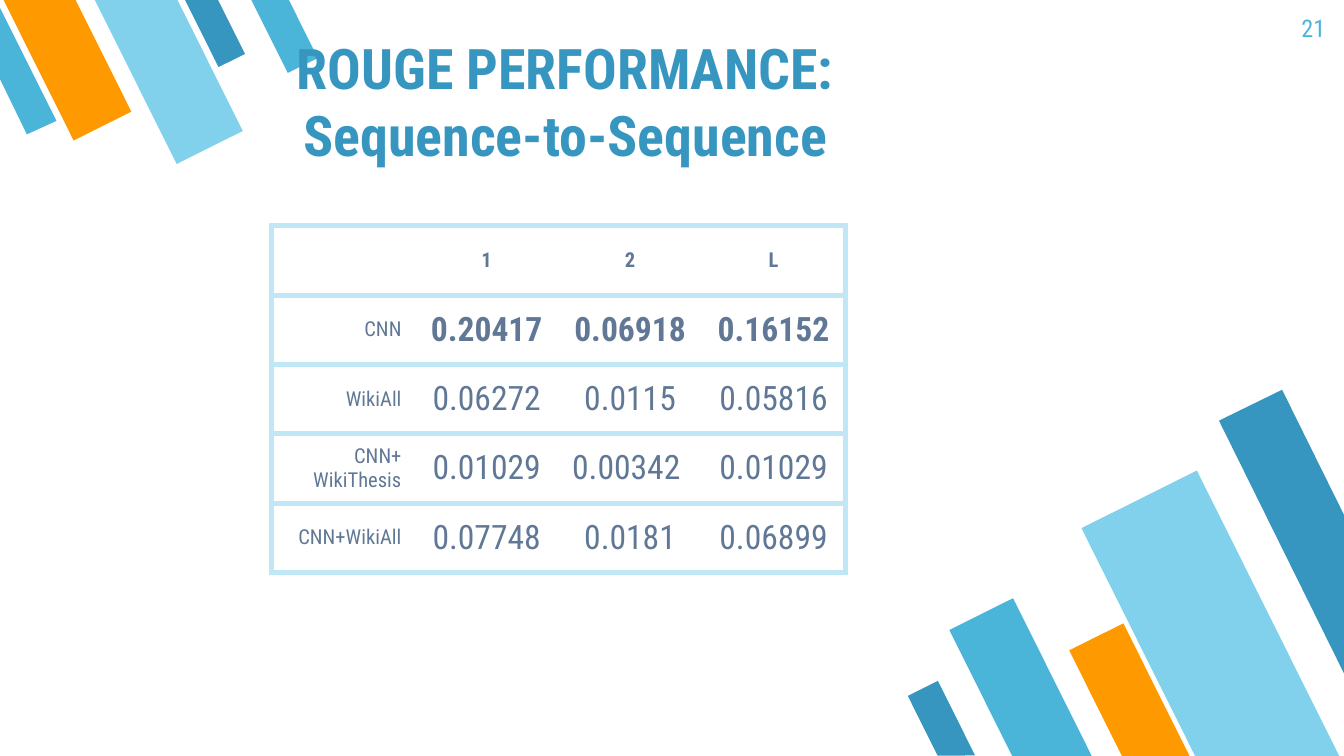
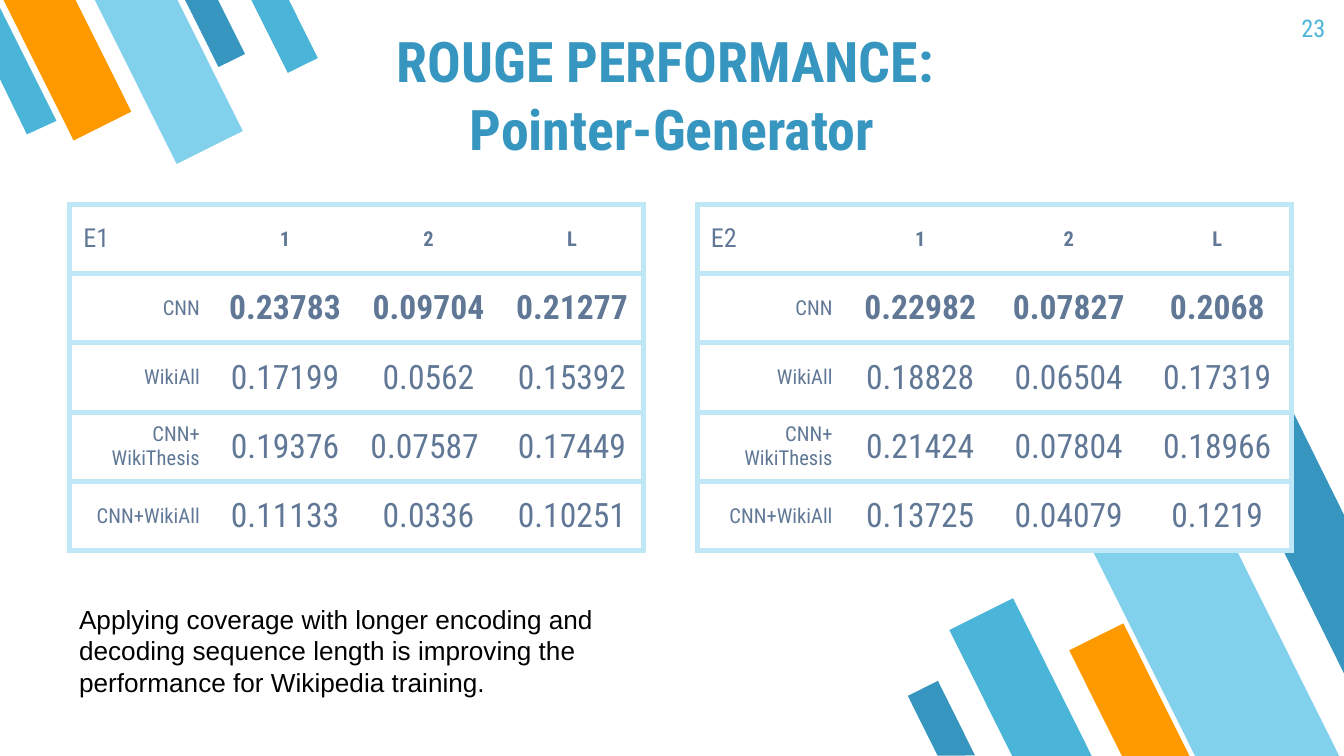
"""Build two slides of ROUGE scores with python-pptx."""
from dataclasses import dataclass

from lxml.etree import SubElement
from pptx import Presentation
from pptx.dml.color import RGBColor
from pptx.enum.shapes import MSO_SHAPE
from pptx.enum.text import MSO_ANCHOR, MSO_AUTO_SIZE, PP_ALIGN
from pptx.oxml.ns import qn
from pptx.util import Inches, Pt

FONT = "Roboto Condensed"
DARK, MID, LIGHT, ORANGE = "3796BF", "4BB5D9", "81D1EC", "FF9900"
SLATE, RULE, WHITE, BLACK = "607896", "C0E7F6", "FFFFFF", "000000"
HEADS = ("1", "2", "L")
CORPORA = ("CNN", "WikiAll", "CNN+\nWikiThesis", "CNN+WikiAll")
TABLE_H = 2.58


@dataclass(frozen=True)
class Bar:
    left: float
    top: float
    width: float
    height: float
    color: str
    angle: float


@dataclass(frozen=True)
class CutBar:
    points: tuple[tuple[float, float], ...]
    color: str


@dataclass(frozen=True)
class ScoreTable:
    left: float
    top: float
    width: float
    corner: str
    scores: tuple[str, ...]
    fill: str | None = None


LOWER, UPPER = 153.5, 333.5
BARS = (
    Bar(7.33, 4.5, 0.53, 1.32, MID, LOWER),
    Bar(8.53, 3.59, 0.96, 2.39, LIGHT, LOWER),
    Bar(8.18, 4.68, 0.45, 1.11, ORANGE, LOWER),
    Bar(6.88, 5.09, 0.25, 0.62, DARK, LOWER),
    Bar(1.49, -0.08, 0.22, 0.56, DARK, UPPER),
    Bar(0.26, -0.18, 0.48, 1.18, ORANGE, UPPER),
    Bar(0.98, -0.2, 0.55, 1.37, LIGHT, UPPER),
    Bar(1.99, -0.1, 0.25, 0.62, MID, UPPER),
)
CUT_BARS = (
    CutBar(((9.54, 2.9), (9.07, 3.13), (10, 5.01), (10, 3.83)), DARK),
    CutBar(((0.2, 1), (0.42, 0.9), (0, 0.06), (0, 0.59)), MID),
)
SEQ2SEQ = ScoreTable(2.02, 1.68, 4.27, "", (
    "0.20417,0.06918,0.16152",
    "0.06272,0.0115,0.05816",
    "0.01029,0.00342 ,0.01029",
    "0.07748,0.0181,0.06899",
))
POINTER_E1 = ScoreTable(0.52, 1.52, 4.27, "E1", (
    "0.23783,0.09704,0.21277",
    "0.17199,0.0562,0.15392",
    "0.19376,0.07587 ,0.17449",
    "0.11133,0.0336,0.10251",
))
POINTER_E2 = ScoreTable(5.19, 1.52, 4.42, "E2", (
    "0.22982,0.07827,0.2068",
    "0.18828,0.06504,0.17319",
    "0.21424,0.07804,0.18966",
    "0.13725,0.04079,0.1219",
), WHITE)


def rgb(value: str) -> RGBColor:
    return RGBColor.from_string(value)


def style_text(tf, size: float, color: str, align=PP_ALIGN.LEFT,
               bold: bool = False, font: str = FONT) -> None:
    for p in tf.paragraphs:
        p.alignment = align
        p.font.name, p.font.size, p.font.bold = font, Pt(size), bold
        p.font.color.rgb = rgb(color)


def set_frame(tf, anchor) -> None:
    tf.word_wrap = True
    tf.auto_size = MSO_AUTO_SIZE.NONE
    tf.vertical_anchor = anchor
    tf.margin_left = tf.margin_right = Inches(0.1)
    tf.margin_top = tf.margin_bottom = Inches(0.1)


def paint(sp, color: str) -> None:
    sp.shadow.inherit = False
    sp.fill.solid()
    sp.fill.fore_color.rgb = rgb(color)
    sp.line.fill.background()


def draw_bar(slide, bar: Bar):
    sp = slide.shapes.add_shape(
        MSO_SHAPE.FLOWCHART_MANUAL_INPUT, Inches(bar.left), Inches(bar.top),
        Inches(bar.width), Inches(bar.height))
    sp.rotation = bar.angle
    sp.element.spPr.get_or_add_xfrm().set("flipH", "1")
    paint(sp, bar.color)
    return sp


def draw_cut_bar(slide, bar: CutBar):
    start, *rest = [(Inches(x), Inches(y)) for x, y in bar.points]
    builder = slide.shapes.build_freeform(*start)
    builder.add_line_segments(rest)
    sp = builder.convert_to_shape()
    paint(sp, bar.color)
    return sp


def move_bars_to_layout(slide, layout) -> None:
    shapes = [draw_bar(slide, bar) for bar in BARS]
    shapes += [draw_cut_bar(slide, bar) for bar in CUT_BARS]
    for sp in shapes:
        layout.shapes.element.append(sp.element)


def set_title(slide, text: str, left: float, top: float,
              width: float, height: float) -> None:
    title = slide.shapes.title
    title.left, title.top = Inches(left), Inches(top)
    title.width, title.height = Inches(width), Inches(height)
    title.text_frame.text = text
    set_frame(title.text_frame, MSO_ANCHOR.BOTTOM)
    style_text(title.text_frame, 30, DARK, PP_ALIGN.CENTER, True)


def add_text(slide, text: str, left: float, top: float,
             width: float, height: float):
    tf = slide.shapes.add_textbox(Inches(left), Inches(top), Inches(width),
                                  Inches(height)).text_frame
    tf.text = text
    set_frame(tf, MSO_ANCHOR.TOP)
    return tf


def add_number(slide, number: int) -> None:
    tf = add_text(slide, str(number), 9.36, 0, 0.6, 0.43)
    style_text(tf, 13, MID, PP_ALIGN.RIGHT)


def set_borders(cell, first: bool, last: bool) -> None:
    tc_pr = cell._tc.get_or_add_tcPr()
    sides = {"a:lnL": first, "a:lnR": last, "a:lnT": True, "a:lnB": True}
    for tag, shown in sides.items():
        ln = SubElement(tc_pr, qn(tag), w=str(Pt(3) if shown else 0))
        if shown:
            solid = SubElement(ln, qn("a:solidFill"))
            SubElement(solid, qn("a:srgbClr"), val=RULE)
        else:
            SubElement(ln, qn("a:noFill"))


def style_cell(cell, row: int, col: int) -> None:
    tf = cell.text_frame
    if row == 0 and col == 0:
        style_text(tf, 14, SLATE)
    elif col == 0:
        style_text(tf, 11, SLATE, PP_ALIGN.RIGHT)
    else:
        style_text(tf, 18 if row else 11, SLATE, PP_ALIGN.CENTER, row < 2)


def add_scores(slide, spec: ScoreTable) -> None:
    rows = [(spec.corner, *HEADS)]
    rows += [(name, *line.split(","))
             for name, line in zip(CORPORA, spec.scores)]
    n_cols = len(rows[0])
    table = slide.shapes.add_table(
        len(rows), n_cols, Inches(spec.left), Inches(spec.top),
        Inches(spec.width), Inches(TABLE_H)).table
    table.first_row = table.horz_banding = False
    for r, values in enumerate(rows):
        for c, value in enumerate(values):
            cell = table.cell(r, c)
            cell.text = value
            cell.vertical_anchor = MSO_ANCHOR.MIDDLE
            cell.margin_left = cell.margin_right = Inches(0.1)
            cell.margin_top = cell.margin_bottom = Inches(0.07)
            style_cell(cell, r, c)
            set_borders(cell, c == 0, c == n_cols - 1)
            if spec.fill:
                cell.fill.solid()
                cell.fill.fore_color.rgb = rgb(spec.fill)
            else:
                cell.fill.background()


def main() -> None:
    prs = Presentation()
    prs.slide_width = Inches(10)
    prs.slide_height = Inches(10) * 9 // 16
    layout = prs.slide_layouts.get_by_name("Title Only")
    for ph in list(layout.placeholders):
        if ph.placeholder_format.idx:
            ph.element.getparent().remove(ph.element)

    slide = prs.slides.add_slide(layout)
    move_bars_to_layout(slide, layout)
    set_title(slide, "ROUGE PERFORMANCE: \vSequence-to-Sequence ",
              0.47, 0.16, 7.57, 1.19)
    add_number(slide, 21)
    add_scores(slide, SEQ2SEQ)

    slide = prs.slides.add_slide(layout)
    set_title(slide, "ROUGE PERFORMANCE: \vPointer-Generator",
              2.39, 0, 5.22, 1.3)
    add_scores(slide, POINTER_E2)
    add_number(slide, 23)
    add_scores(slide, POINTER_E1)
    tf = add_text(slide, "Applying coverage with longer encoding and decoding "
                  "sequence length is improving the performance for Wikipedia "
                  "training.", 0.49, 4.39, 4.36, 1.03)
    style_text(tf, 14, BLACK, font="Arial")

    prs.save("out.pptx")


if __name__ == "__main__":
    main()
